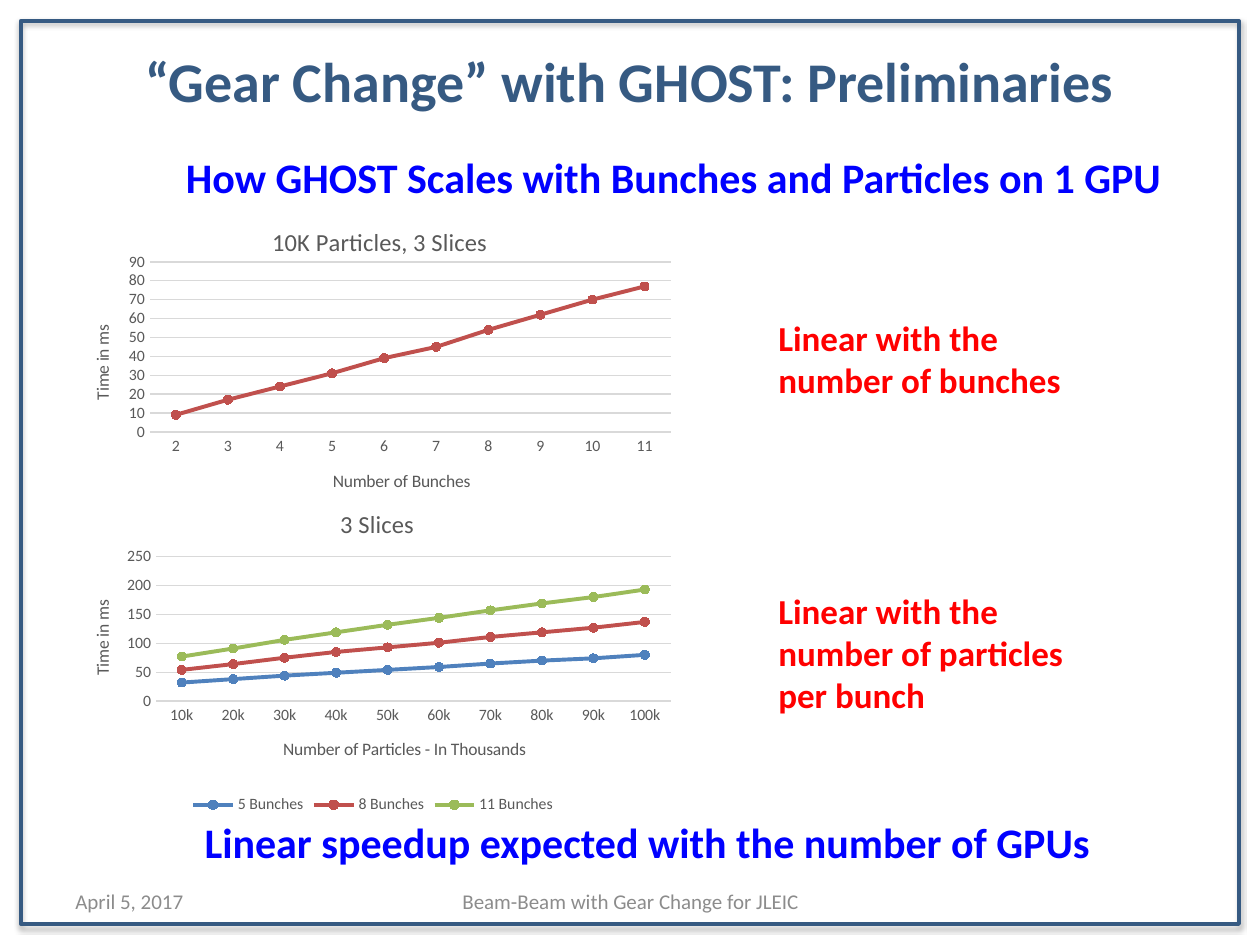
import lxml.etree
import pptx
import pptx.chart.data
import pptx.dml.color
import pptx.enum.chart
import pptx.enum.shapes
import pptx.enum.text
import pptx.oxml.ns
import pptx.util

Cm, Pt, qn = pptx.util.Cm, pptx.util.Pt, pptx.oxml.ns.qn
ALIGN, ANCHOR = pptx.enum.text.PP_ALIGN, pptx.enum.text.MSO_ANCHOR
COLORS = {
    "navy": "365A82", "blue": "0000FF", "red": "FF0000", "footer": "8C8C8C",
    "label": "595959", "grid": "D9D9D9", "shadow": "000000",
    "azure": "4F81BD", "brick": "C0504D", "olive": "9BBB59",
}


def rgb(color):
    return pptx.dml.color.RGBColor.from_string(COLORS[color])


def style_font(font, size, color, bold=False):
    font.name, font.size, font.bold = "Calibri", Pt(size), bold
    font.color.rgb = rgb(color)


def write(paragraph, text, size=10, color="label", bold=False, align=None, spacing=None, indent=None):
    run = paragraph.add_run()
    run.text = text
    style_font(run.font, size, color, bold)
    if align is not None:
        paragraph.alignment = align
    if spacing is not None:
        paragraph.line_spacing = spacing
    if indent is not None:
        paragraph._p.get_or_add_pPr().set("marL", str(Cm(indent)))


def place(element, **fractions):
    for old in element.findall(qn("c:layout")):
        element.remove(old)
    layout = lxml.etree.Element(qn("c:layout"))
    manual = lxml.etree.SubElement(layout, qn("c:manualLayout"))
    settings = {"xMode": "edge", "yMode": "edge", **fractions}
    if "w" in fractions:
        settings = {"layoutTarget": "inner", **settings}
    for tag, value in settings.items():
        lxml.etree.SubElement(manual, qn(f"c:{tag}")).set("val", str(value))
    element.insert(1 if element.find(qn("c:tx")) is not None else 0, layout)


class SlideBuilder:
    """Holds the style and the current slide, and adds its elements."""

    def __init__(self, slide):
        self.slide = slide
        self.shapes = slide.shapes

    def text(self, box, *lines, anchor=ANCHOR.MIDDLE, wrap=True, top=0.13, **style):
        frame = self.shapes.add_textbox(*map(Cm, box)).text_frame
        frame.word_wrap, frame.vertical_anchor, frame.margin_top = wrap, anchor, Cm(top)
        for index, line in enumerate(lines):
            paragraph = frame.add_paragraph() if index else frame.paragraphs[0]
            write(paragraph, line, **style)

    def border(self, box):
        border = self.shapes.add_shape(pptx.enum.shapes.MSO_SHAPE.RECTANGLE, *map(Cm, box))
        border.fill.background()
        border.line.color.rgb = rgb("navy")
        border.line.width = Pt(2)
        border.shadow.inherit = False
        effects = border._element.spPr.find(qn("a:effectLst"))
        shadow = lxml.etree.SubElement(effects, qn("a:outerShdw"), blurRad=str(Pt(3.1)),
                                       dist=str(Pt(1.8)), dir="5400000", rotWithShape="0")
        tint = lxml.etree.SubElement(shadow, qn("a:srgbClr"), val=COLORS["shadow"])
        lxml.etree.SubElement(tint, qn("a:alpha"), val="35000")

    def chart_title(self, title, text, position, size=10):
        write(title.text_frame.paragraphs[0], text, size=size)
        place(title._element, x=position[0], y=position[1])

    def axis(self, axis, text, position):
        axis.major_tick_mark = axis.minor_tick_mark = pptx.enum.chart.XL_TICK_MARK.NONE
        style_font(axis.tick_labels.font, 9, "label")
        self.chart_title(axis.axis_title, text, position)

    def line_chart(self, box, title, categories, series, category_title, limits, plot,
                   positions, legend=False):
        data = pptx.chart.data.CategoryChartData()
        data.categories = categories
        for name, _, values in series:
            data.add_series(name, values)
        kind = pptx.enum.chart.XL_CHART_TYPE.LINE_MARKERS
        chart = self.shapes.add_chart(kind, *map(Cm, box), data).chart
        style_font(chart.font, 10, "label")
        chart.has_title = True
        self.chart_title(chart.chart_title, title, positions[0], size=14)
        self.axis(chart.category_axis, category_title, positions[1])
        self.axis(chart.value_axis, "Time in ms", positions[2])
        chart.value_axis.minimum_scale = 0
        chart.value_axis.maximum_scale, chart.value_axis.major_unit = limits
        chart.value_axis.format.line.fill.background()
        for line in (chart.category_axis.format.line, chart.value_axis.major_gridlines.format.line):
            line.color.rgb = rgb("grid")
            line.width = Pt(0.75)
        chart.has_legend = legend
        if legend:
            chart.legend.position = pptx.enum.chart.XL_LEGEND_POSITION.BOTTOM
            chart.legend.include_in_layout = False
            style_font(chart.legend.font, 9, "label")
        chart.plots[0].vary_by_categories = False
        for curve, (_, color, _) in zip(chart.plots[0].series, series):
            curve.smooth = False
            curve.format.line.color.rgb = rgb(color)
            curve.format.line.width = Pt(2.25)
            curve.marker.style = pptx.enum.chart.XL_MARKER_STYLE.CIRCLE
            curve.marker.size = 5
            curve.marker.format.fill.solid()
            curve.marker.format.fill.fore_color.rgb = rgb(color)
            curve.marker.format.line.color.rgb = rgb(color)
        place(chart._chartSpace.find(f".//{qn('c:plotArea')}"), **dict(zip("xywh", plot)))


def main():
    deck = pptx.Presentation()
    deck.slide_width, deck.slide_height = Cm(25.4), Cm(19.05)
    page = SlideBuilder(deck.slides.add_slide(deck.slide_layouts[6]))

    page.text((0, 0.91, 25.4, 1.63), "“Gear Change” with GHOST: Preliminaries", top=0.05,
              size=32, color="navy", bold=True, align=ALIGN.CENTER, spacing=0.95)
    footer = {"size": 12, "color": "footer"}
    page.text((1.27, 17.65, 5.92, 1.02), "April 5, 2017", **footer)
    page.text((8.69, 17.65, 8.05, 1.02), "Beam-Beam with Gear Change for JLEIC",
              align=ALIGN.CENTER, **footer)
    heading = {"size": 24, "color": "blue", "bold": True, "spacing": 0.96}
    page.text((2.54, 16.51, 19.69, 1.02), "Linear speedup expected with the number of GPUs",
              align=ALIGN.RIGHT, indent=1.14, **heading)
    page.text((0.2, 2.97, 24.1, 14.58), "How GHOST Scales with Bunches and Particles on 1 GPU",
              anchor=ANCHOR.TOP, top=0.15, indent=3.3, **heading)
    page.border((0.42, 0.42, 24.56, 18.21))

    page.line_chart(
        (1.27, 4.01, 12.5, 6.35), "10K Particles, 3 Slices", [str(n) for n in range(2, 12)],
        [("Series 1", "brick", (9, 17, 24, 31, 39, 45, 54, 62, 70, 77))],
        "Number of Bunches", limits=(90, 10), plot=(0.14, 0.2, 0.84, 0.54),
        positions=[(0.33, 0.07), (0.43, 0.85), (0.04, 0.39)])
    page.line_chart(
        (1.27, 9.73, 12.5, 6.78), "3 Slices", [f"{n}k" for n in range(10, 101, 10)],
        [("5 Bunches", "azure", (32, 38, 44, 49, 54, 59, 65, 70, 74, 80)),
         ("8 Bunches", "brick", (54, 64, 75, 85, 93, 101, 111, 119, 127, 137)),
         ("11 Bunches", "olive", (77, 91, 106, 119, 132, 144, 157, 169, 180, 193))],
        "Number of Particles - In Thousands", limits=(250, 50), plot=(0.15, 0.22, 0.83, 0.43),
        positions=[(0.44, 0.06), (0.35, 0.75), (0.04, 0.34)], legend=True)

    finding = {"anchor": ANCHOR.TOP, "wrap": False, "size": 20, "color": "red", "bold": True}
    page.text((15.44, 6.25, 6.25, 1.96), "Linear with the", "number of bunches", **finding)
    page.text((15.44, 11.76, 6.32, 2.82), "Linear with the", "number of particles", "per bunch",
              **finding)
    deck.save("out.pptx")


if __name__ == "__main__":
    main()
